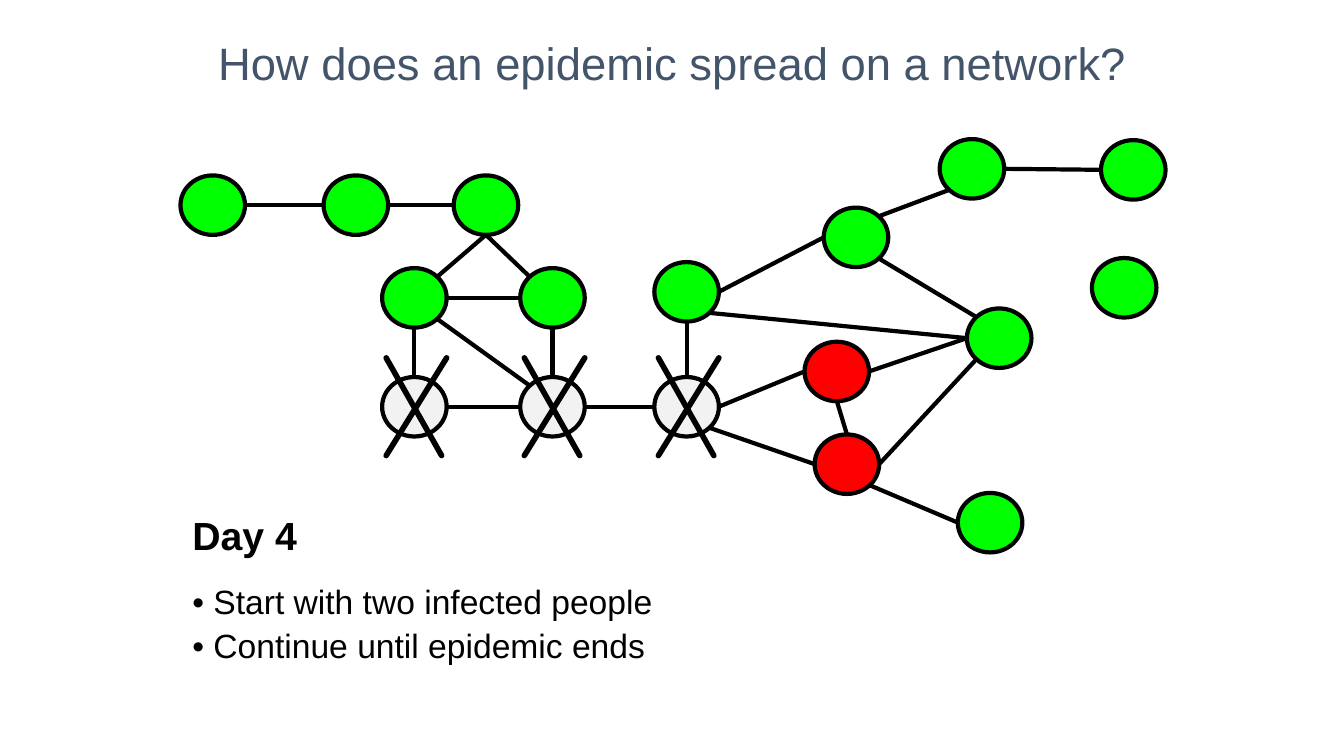
import math

import pptx
import pptx.dml.color
import pptx.enum.shapes
import pptx.enum.text
import pptx.util
from lxml import etree
from pptx.oxml.ns import qn
from pptx.util import Inches

NODE_WIDTH, NODE_HEIGHT = 0.64, 0.59
HEALTHY, INFECTED, REMOVED = "00FF00", "FF0000", "F2F2F2"

# name: (left, top, state)
PEOPLE = {
    "chain 1": (1.79, 1.74, HEALTHY),
    "chain 2": (3.21, 1.74, HEALTHY),
    "chain 3": (4.5, 1.74, HEALTHY),
    "middle 1": (3.79, 2.66, HEALTHY),
    "middle 2": (5.16, 2.66, HEALTHY),
    "middle 3": (6.49, 2.6, HEALTHY),
    "removed 1": (3.79, 3.74, REMOVED),
    "removed 2": (5.16, 3.74, REMOVED),
    "removed 3": (6.49, 3.74, REMOVED),
    "infected 1": (7.98, 3.39, INFECTED),
    "infected 2": (8.08, 4.31, INFECTED),
    "upper 1": (8.17, 2.06, HEALTHY),
    "upper 2": (9.32, 1.38, HEALTHY),
    "upper 3": (10.92, 1.39, HEALTHY),
    "right": (9.59, 3.06, HEALTHY),
    "lower": (9.5, 4.89, HEALTHY),
    "isolated": (10.83, 2.56, HEALTHY),
}

# Compass points on a node's outline, in degrees clockwise from east
ANGLES = {"E": 0, "SE": 45, "S": 90, "SW": 135, "W": 180, "NW": 225, "N": 270, "NE": 315}

CONTACTS = [
    ("chain 1", "E", "chain 2", "W"),
    ("chain 2", "E", "chain 3", "W"),
    ("chain 3", "S", "middle 1", "NE"),
    ("chain 3", "S", "middle 2", "NW"),
    ("middle 1", "E", "middle 2", "W"),
    ("middle 1", "S", "removed 1", "N"),
    ("middle 1", "SE", "removed 2", "NW"),
    ("middle 2", "S", "removed 2", "N"),
    ("middle 3", "S", "removed 3", "N"),
    ("removed 1", "E", "removed 2", "W"),
    ("removed 2", "E", "removed 3", "W"),
    ("removed 3", "E", "infected 1", "W"),
    ("removed 3", "SE", "infected 2", "W"),
    ("infected 1", "S", "infected 2", "N"),
    ("infected 1", "E", "right", "W"),
    ("infected 2", "E", "right", "SW"),
    ("infected 2", "SE", "lower", "W"),
    ("middle 3", "E", "upper 1", "W"),
    ("middle 3", "SE", "right", "W"),
    ("upper 1", "SE", "right", "NW"),
    ("upper 1", "NE", "upper 2", "SW"),
    ("upper 2", "E", "upper 3", "W"),
]


def color(hex_string):
    return pptx.dml.color.RGBColor.from_string(hex_string)


def add_text(page, text, left, top, width, height, size, hex_color="000000",
             bold=False, align=pptx.enum.text.PP_ALIGN.LEFT, spacing=1.0):
    box = page.shapes.add_textbox(Inches(left), Inches(top), Inches(width), Inches(height))
    frame = box.text_frame
    frame.word_wrap = True
    frame.text = text
    for para in frame.paragraphs:
        para.alignment = align
        para.line_spacing = spacing
        for span in para.runs:
            span.font.name = "Arial"
            span.font.size = pptx.util.Pt(size)
            span.font.bold = bold
            span.font.color.rgb = color(hex_color)


def add_person(page, left, top, state):
    node = page.shapes.add_shape(pptx.enum.shapes.MSO_SHAPE.OVAL, Inches(left), Inches(top),
                                 Inches(NODE_WIDTH), Inches(NODE_HEIGHT))
    node.shadow.inherit = False
    node.fill.solid()
    node.fill.fore_color.rgb = color(state)
    node.line.color.rgb = color("000000")
    node.line.width = pptx.util.Pt(3)


def add_line(page, start, end, weight=3, round_ends=False):
    line = page.shapes.add_connector(pptx.enum.shapes.MSO_CONNECTOR.STRAIGHT,
                                     *(Inches(value) for value in (*start, *end)))
    line.line.color.rgb = color("000000")
    line.line.width = pptx.util.Pt(weight)
    properties = line._element.spPr
    if round_ends:
        properties.find(qn("a:ln")).set("cap", "rnd")
    etree.SubElement(properties, qn("a:effectLst"))


def outline_point(name, side):
    left, top, _ = PEOPLE[name]
    angle = math.radians(ANGLES[side])
    return (round(left + NODE_WIDTH / 2 * (1 + math.cos(angle)), 3),
            round(top + NODE_HEIGHT / 2 * (1 + math.sin(angle)), 3))


def add_cross(page, left, top):
    """Cross out the person whose node has this top left corner."""
    upper, lower = top - 0.19, top + 0.78
    for start, end in ((0.04, 0.59), (0.64, 0.04)):
        add_line(page, (left + start, upper), (left + end, lower), weight=4, round_ends=True)


def main():
    deck = pptx.Presentation()
    deck.slide_width, deck.slide_height = Inches(13.33), Inches(7.5)
    page = deck.slides.add_slide(deck.slide_layouts[6])

    add_text(page, "How does an epidemic spread on a network?", 1.88, 0.3, 9.57, 0.85,
             size=32.4, hex_color="44546A", align=pptx.enum.text.PP_ALIGN.CENTER)
    for left, top, state in PEOPLE.values():
        add_person(page, left, top, state)
    for first, first_side, second, second_side in CONTACTS:
        add_line(page, outline_point(first, first_side), outline_point(second, second_side))
    for left, top, state in PEOPLE.values():
        if state == REMOVED:
            add_cross(page, left, top)
    add_text(page, "Day 4", 1.81, 5.02, 1.51, 0.57, size=28, bold=True)
    add_text(page, "• Start with two infected people\n• Continue until epidemic ends",
             1.81, 5.67, 10.07, 0.98, size=24, spacing=1.1)

    deck.save("out.pptx")


if __name__ == "__main__":
    main()
